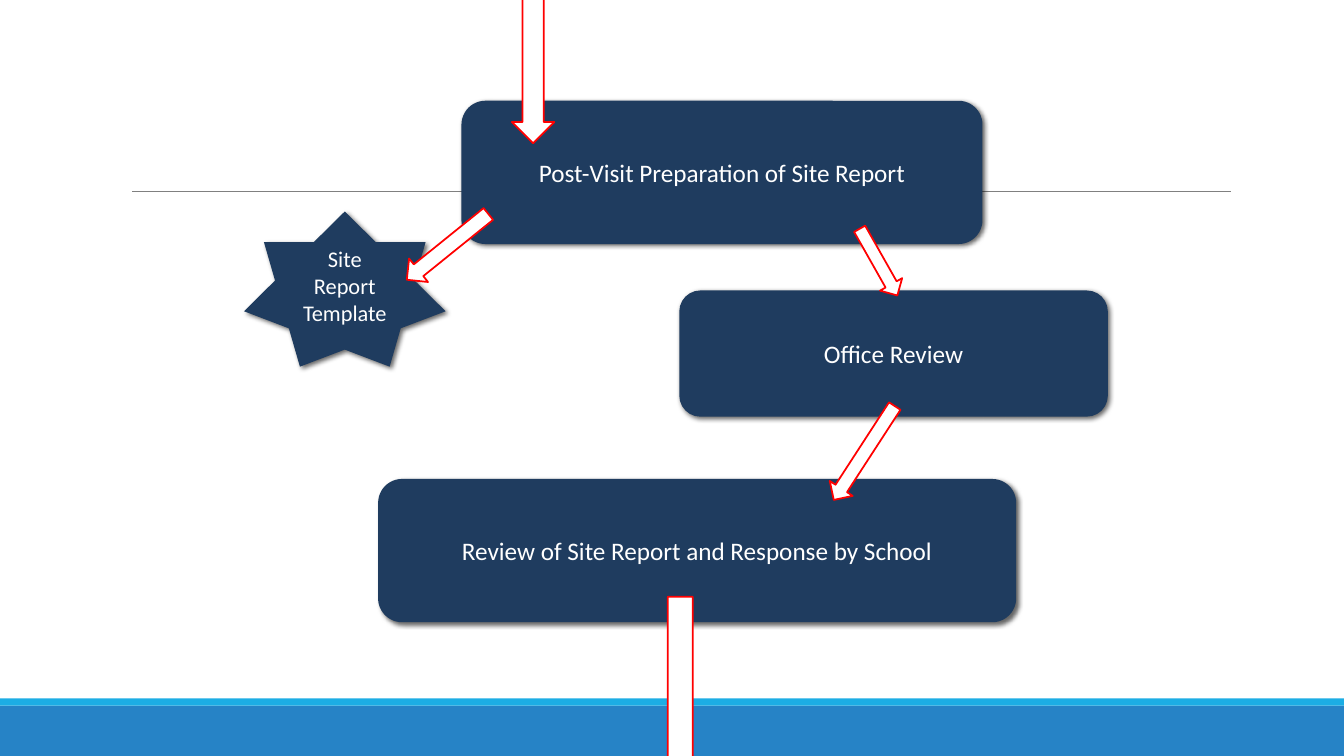
"""Build the site report review flow slide."""
from lxml.etree import fromstring
from pptx import Presentation
from pptx.dml.color import RGBColor
from pptx.enum.shapes import MSO_CONNECTOR, MSO_SHAPE
from pptx.enum.text import MSO_ANCHOR, PP_ALIGN
from pptx.oxml.ns import nsdecls
from pptx.util import Cm, Pt

WIDTH, NAVY, WHITE, RED = 33.87, "1F3C5F", "FFFFFF", "FF0000"
BOX, STAR = MSO_SHAPE.ROUNDED_RECTANGLE, MSO_SHAPE.STAR_7_POINT
DOWN, LEFT, RIGHT = MSO_SHAPE.DOWN_ARROW, MSO_SHAPE.LEFT_ARROW, MSO_SHAPE.RIGHT_ARROW
SHADOW = (f'<a:effectLst {nsdecls("a")}><a:outerShdw blurRad="44450" dist="25400" '
          'dir="2700000" algn="ctr" rotWithShape="0"><a:srgbClr val="000000">'
          '<a:alpha val="60000"/></a:srgbClr></a:outerShdw></a:effectLst>')
EMPTY = f'<a:effectLst {nsdecls("a")}/>'

deck = Presentation()
deck.slide_width, deck.slide_height = Cm(WIDTH), Cm(19.05)
slide = deck.slides.add_slide(deck.slide_layouts[6])


def draw(kind, place, fill, line=None, turn=0):
    shape = slide.shapes.add_shape(kind, *[Cm(n) for n in place])
    shape.shadow.inherit = False
    shape.fill.solid()
    shape.fill.fore_color.rgb = RGBColor.from_string(fill)
    if line:
        shape.line.color.rgb = RGBColor.from_string(line)
        shape.line.width = Pt(1.25)
    else:
        shape.line.fill.background()
    shape.rotation = turn
    return shape


def write(shape, text, size=18, color=WHITE, font="Calibri"):
    frame = shape.text_frame
    frame.word_wrap = True
    frame.vertical_anchor = MSO_ANCHOR.MIDDLE
    para = frame.paragraphs[0]
    para.alignment = PP_ALIGN.CENTER
    run = para.add_run()
    run.text = text
    run.font.size, run.font.name = Pt(size), font
    run.font.color.rgb = RGBColor.from_string(color)


draw(MSO_SHAPE.RECTANGLE, (0, 17.78, WIDTH, 1.27), "2683C6")
draw(MSO_SHAPE.RECTANGLE, (0, 17.6, WIDTH, 0.18), "1CADE4")
rule = slide.shapes.add_connector(
    MSO_CONNECTOR.STRAIGHT, Cm(3.33), Cm(4.83), Cm(31.01), Cm(4.83))
rule.line.color.rgb = RGBColor.from_string("808080")
rule.line.width = Pt(0.5)
rule._element.spPr.append(fromstring(EMPTY))

steps = [
    (BOX, (11.63, 2.54, 13.13, 3.61), "Post-Visit Preparation of Site Report", 18),
    (STAR, (6.15, 5.33, 5.08, 3.91), "Site Report Template", 16),
    (BOX, (17.12, 7.32, 10.8, 3.18), "Office Review", 18),
    (BOX, (9.53, 12.07, 16.08, 3.61), "Review of Site Report and Response by School", 18),
]
for kind, place, text, size in steps:
    step = draw(kind, place, NAVY)
    props = step._element.spPr
    props.replace(props[-1], fromstring(SHADOW))
    write(step, text, size=size)

arrows = [
    (DOWN, (12.9, -0.84, 1.07, 4.45), 0),
    (LEFT, (9.96, 5.84, 2.64, 0.76), 321.1),
    (DOWN, (21.82, 5.64, 0.64, 1.93), 330.5),
    (DOWN, (16.51, 15.04, 1.27, 5.08), 0),
    (RIGHT, (20.37, 11.07, 2.82, 0.69), 123),
]
for kind, place, turn in arrows:
    draw(kind, place, WHITE, line=RED, turn=turn)

deck.save("out.pptx")
